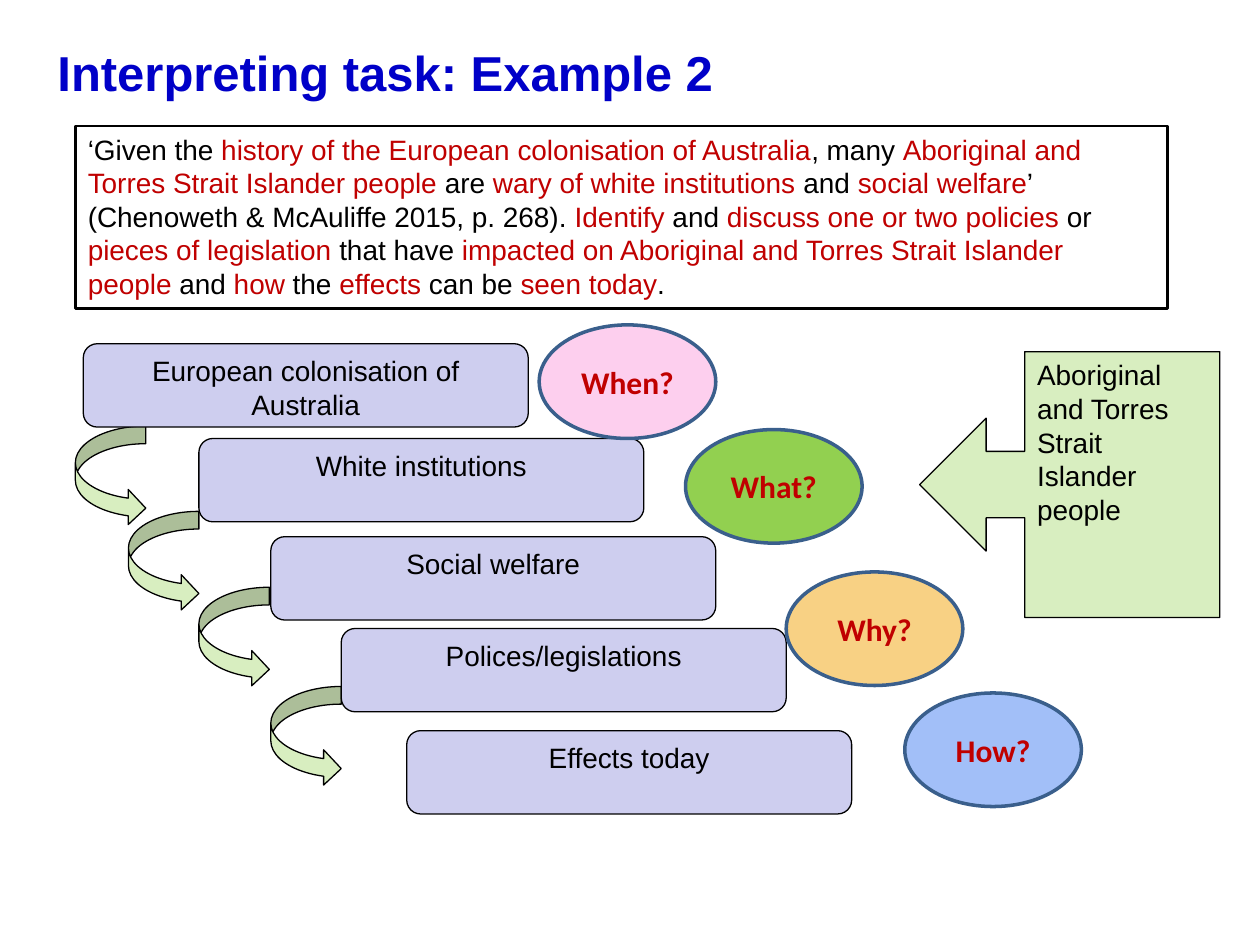
import pptx
import pptx.util
import pptx.dml.color
import pptx.enum.shapes
import pptx.enum.text
from dataclasses import dataclass

Cm = pptx.util.Cm
Pt = pptx.util.Pt
Kind = pptx.enum.shapes.MSO_SHAPE
Align = pptx.enum.text.PP_ALIGN
Anchor = pptx.enum.text.MSO_ANCHOR
Fit = pptx.enum.text.MSO_AUTO_SIZE


@dataclass(frozen=True)
class Theme:
    font: str = "Arial"
    round_font: str = "Calibri"
    title: str = "0000C8"
    ink: str = "000000"
    key: str = "C00000"
    step: str = "CECEEF"
    arrow: str = "D8EEC0"
    rim: str = "3A5F8C"
    pink: str = "FDCFEE"
    green: str = "92D050"
    gold: str = "F8D184"
    blue: str = "A2BFF8"
    title_size: int = 28
    ask_size: int = 18
    body_size: int = 16
    thin: float = 0.75
    frame: float = 1.5
    thick: float = 2


LOOK = Theme()

TASK = (
    "‘Given the |history of the European colonisation of Australia|, many "
    "|Aboriginal and Torres Strait Islander people| are |wary of white institutions "
    "|and |social welfare|’ (Chenoweth & McAuliffe 2015, p. 268). |Identify| and "
    "|discuss one or two policies |or |pieces of legislation |that have "
    "|impacted on Aboriginal and Torres Strait Islander people| and |how| the "
    "|effects |can be |seen today|."
)

STEPS = [
    ("European colonisation of Australia", 1.68, 6.93),
    ("White institutions", 4.01, 8.84),
    ("Social welfare", 5.46, 10.82),
    ("Polices/legislations", 6.88, 12.67),
    ("Effects today", 8.2, 14.73),
]

BENDS = [(1.52, 8.59), (2.59, 10.31), (4.01, 11.84), (5.46, 13.84)]

ASKS = [
    ("When?", 10.87, 6.55, LOOK.pink),
    ("What?", 13.82, 8.66, LOOK.green),
    ("Why?", 15.85, 11.53, LOOK.gold),
    ("How?", 18.24, 13.97, LOOK.blue),
]


def tint(code):
    return pptx.dml.color.RGBColor.from_string(code)


def style(run, size, code, font=LOOK.font, bold=False):
    run.font.name = font
    run.font.size = Pt(size)
    run.font.bold = bold
    run.font.color.rgb = tint(code)


def write(frame, text, size, code, align=Align.LEFT, anchor=Anchor.TOP, **face):
    frame.word_wrap = True
    frame.vertical_anchor = anchor
    para = frame.paragraphs[0]
    para.text = text
    para.alignment = align
    style(para.runs[0], size, code, **face)


def add_form(slide, kind, left, top, width, height, fill, line=LOOK.ink, weight=LOOK.thin):
    form = slide.shapes.add_shape(kind, Cm(left), Cm(top), Cm(width), Cm(height))
    form.shadow.inherit = False
    form.fill.solid()
    form.fill.fore_color.rgb = tint(fill)
    form.line.color.rgb = tint(line)
    form.line.width = Pt(weight)
    return form


def add_title(slide, text):
    box = slide.shapes.add_textbox(Cm(0.91), Cm(0.74), Cm(23.9), Cm(1.85))
    write(box.text_frame, text, LOOK.title_size, LOOK.title, bold=True)


def add_task(slide, text):
    box = slide.shapes.add_textbox(Cm(1.52), Cm(2.54), Cm(22.02), Cm(3.68))
    box.line.color.rgb = tint(LOOK.ink)
    box.line.width = Pt(LOOK.frame)
    frame = box.text_frame
    frame.word_wrap = True
    frame.auto_size = Fit.SHAPE_TO_FIT_TEXT
    for rank, part in enumerate(text.split("|")):
        run = frame.paragraphs[0].add_run()
        run.text = part
        style(run, LOOK.body_size, LOOK.key if rank % 2 else LOOK.ink)


def add_bend(slide, left, top):
    add_form(slide, Kind.CURVED_RIGHT_ARROW, left, top, 1.42, 2.01, LOOK.arrow)


def add_step(slide, text, left, top):
    form = add_form(slide, Kind.ROUNDED_RECTANGLE, left, top, 8.97, 1.68, LOOK.step)
    write(form.text_frame, text, LOOK.body_size, LOOK.ink, Align.CENTER)


def add_ask(slide, text, left, top, fill):
    form = add_form(slide, Kind.OVAL, left, top, 3.56, 2.29, fill, LOOK.rim, LOOK.thick)
    write(form.text_frame, text, LOOK.ask_size, LOOK.key, Align.CENTER,
          Anchor.MIDDLE, font=LOOK.round_font, bold=True)


def add_group(slide, text):
    form = add_form(slide, Kind.LEFT_ARROW_CALLOUT, 18.54, 7.09, 6.05, 5.36, LOOK.arrow)
    write(form.text_frame, text, LOOK.body_size, LOOK.ink)


def main():
    deck = pptx.Presentation()
    deck.slide_width = Cm(25.4)
    deck.slide_height = Cm(19.05)
    slide = deck.slides.add_slide(deck.slide_layouts[6])
    add_title(slide, "Interpreting task: Example 2")
    add_task(slide, TASK)
    for bend in BENDS:
        add_bend(slide, *bend)
    for step in STEPS:
        add_step(slide, *step)
    add_group(slide, "Aboriginal and Torres Strait Islander people")
    for ask in ASKS:
        add_ask(slide, *ask)
    deck.save("out.pptx")


if __name__ == "__main__":
    main()
